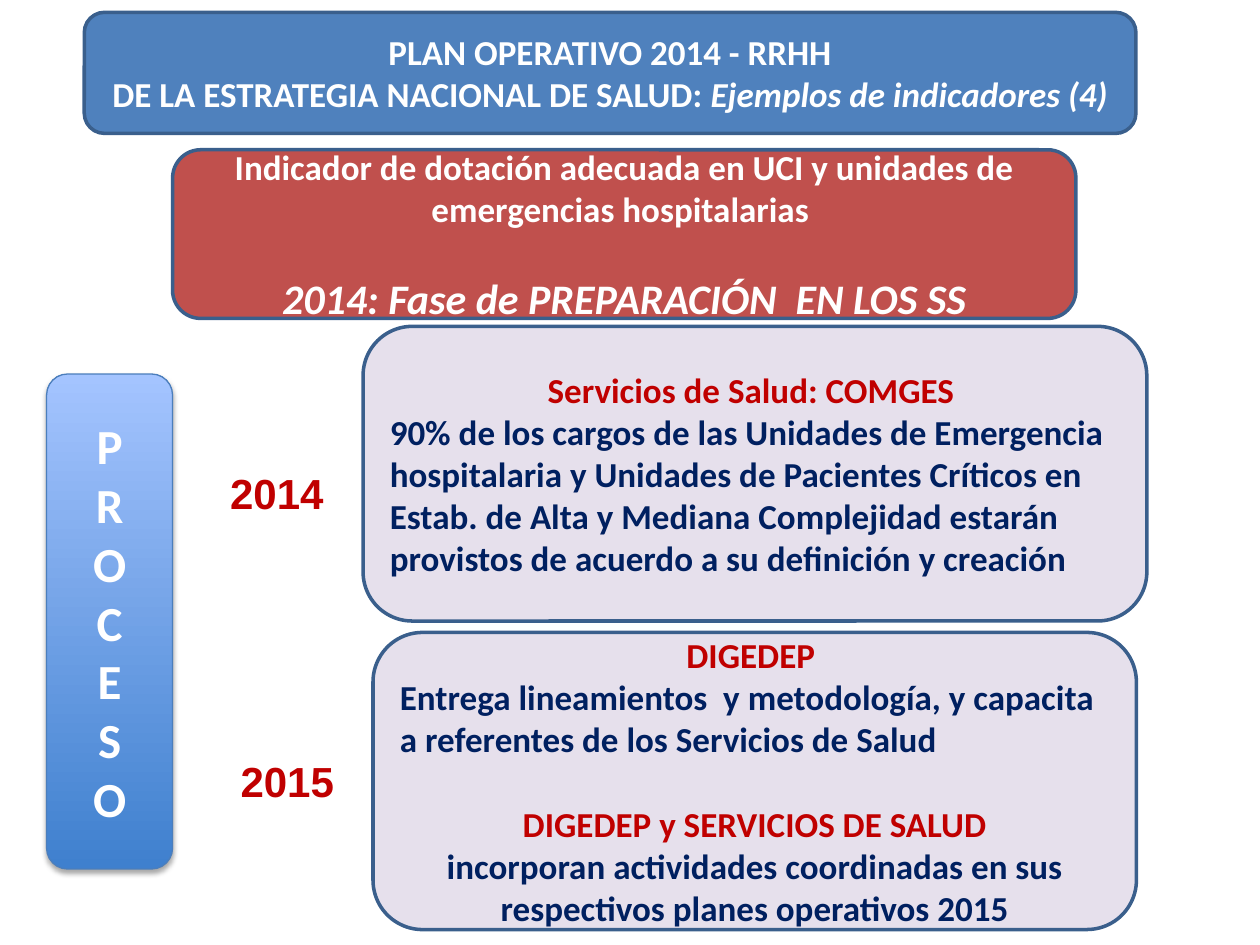
import pptx
import pptx.dml.color
import pptx.enum.shapes
import pptx.enum.text
import pptx.oxml
import pptx.oxml.ns
import pptx.util
from pptx.util import Cm

COLORS = {
    "white": "FFFFFF", "header": "4F81BD", "indicator": "C0504D",
    "panel": "E6E0EC", "outline": "3A5F8C", "red": "C00000", "navy": "002060",
    "process_low": "3F80CE", "process_high": "A4C4FF",
    "process_line": "4B7EBC", "shadow": "000000",
}
RGB = {name: pptx.dml.color.RGBColor.from_string(code) for name, code in COLORS.items()}
ALIGN = pptx.enum.text.PP_ALIGN
ROUNDED = pptx.enum.shapes.MSO_SHAPE.ROUNDED_RECTANGLE
MIDDLE = pptx.enum.text.MSO_ANCHOR.MIDDLE
LINE_GAP = 24.4  # height of one 20 pt line


def write(shape, paragraphs, font="Calibri"):
    """Fill a shape with (alignment, space before, runs); a run is (text, size, color, italic)."""
    frame = shape.text_frame
    for index, (alignment, gap, runs) in enumerate(paragraphs):
        para = frame.paragraphs[0] if index == 0 else frame.add_paragraph()
        para.alignment = alignment
        para.space_before = pptx.util.Pt(gap)
        for text, size, color, italic in runs:
            span = para.add_run()
            span.text = text
            span.font.name = font
            span.font.size = pptx.util.Pt(size)
            span.font.bold = True
            span.font.italic = italic
            span.font.color.rgb = RGB[color]


deck = pptx.Presentation()
deck.slide_width, deck.slide_height = Cm(25.4), Cm(19.05)
page = deck.slides.add_slide(deck.slide_layouts[5])

# Title plate, indicator and the two yearly panels
title_place = (1.7, 0.25, 21.2, 2.44)
panels = [
    (title_place, "header", []),
    ((3.48, 3.02, 18.21, 3.4), "indicator", [
        (ALIGN.CENTER, 0, [("Indicador de dotación adecuada en UCI y unidades de "
                            "emergencias hospitalarias ", 20, "white", False)]),
        (ALIGN.CENTER, LINE_GAP, [("2014: Fase de PREPARACIÓN  EN LOS SS", 24, "white", True)]),
    ]),
    ((7.32, 6.58, 15.8, 5.94), "panel", [
        (ALIGN.CENTER, 0, [("Servicios de Salud: COMGES ", 20, "red", False)]),
        (ALIGN.LEFT, 0, [("90% de los cargos de las Unidades de Emergencia  hospitalaria y "
                          "Unidades de Pacientes Críticos en Estab. de Alta y Mediana "
                          "Complejidad estarán provistos de acuerdo a su definición y "
                          "creación", 20, "navy", False)]),
    ]),
    ((7.52, 12.75, 15.39, 5.99), "panel", [
        (ALIGN.CENTER, 0, [("DIGEDEP ", 20, "red", False)]),
        (ALIGN.LEFT, 0, [("Entrega lineamientos  y metodología, y capacita a referentes "
                          "de los Servicios de Salud", 20, "navy", False)]),
        (ALIGN.CENTER, LINE_GAP, [("DIGEDEP y SERVICIOS DE SALUD", 20, "red", False)]),
        (ALIGN.CENTER, 0, [("incorporan actividades coordinadas en sus respectivos "
                            "planes operativos 2015", 20, "navy", False)]),
    ]),
]
for place, color, paragraphs in panels:
    panel = page.shapes.add_shape(ROUNDED, *map(Cm, place))
    panel.fill.solid()
    panel.fill.fore_color.rgb = RGB[color]
    panel.line.color.rgb = RGB["outline"]
    panel.line.width = pptx.util.Pt(2)
    panel.shadow.inherit = False
    panel.text_frame.vertical_anchor = MIDDLE
    write(panel, paragraphs)

# Title, brought in front of its plate
title = page.shapes.title
title.left, title.top, title.width, title.height = map(Cm, title_place)
title.text_frame.auto_size = pptx.enum.text.MSO_AUTO_SIZE.NONE
title.text_frame.vertical_anchor = MIDDLE
write(title, [
    (ALIGN.CENTER, 0, [("PLAN OPERATIVO 2014 - RRHH", 20, "white", False)]),
    (ALIGN.CENTER, 0, [("DE LA ESTRATEGIA NACIONAL DE SALUD: ", 20, "white", False),
                       ("Ejemplos de indicadores (4)", 20, "white", True)]),
])
page.shapes._spTree.append(title._element)

# Vertical process label
process = page.shapes.add_shape(ROUNDED, Cm(0.94), Cm(7.54), Cm(2.54), Cm(9.98))
process.fill.gradient()
process.fill.gradient_angle = 90
for position, color in enumerate(["process_low", "process_high"]):
    stop = process.fill.gradient_stops[position]
    stop.color.rgb = RGB[color]
    stop.position = position
process.line.color.rgb = RGB["process_line"]
process.line.width = pptx.util.Pt(0.75)
process.shadow.inherit = False
process._element.spPr.find(pptx.oxml.ns.qn("a:effectLst")).append(pptx.oxml.parse_xml(
    '<a:outerShdw xmlns:a="http://schemas.openxmlformats.org/drawingml/2006/main" '
    f'blurRad="{pptx.util.Pt(3.1)}" dist="{pptx.util.Pt(1.8)}" dir="5400000" rotWithShape="0">'
    f'<a:srgbClr val="{COLORS["shadow"]}"><a:alpha val="35000"/></a:srgbClr></a:outerShdw>'))
process.text_frame.vertical_anchor = MIDDLE
write(process, [(ALIGN.CENTER, 0, [(letter, 28, "white", False)]) for letter in "PROCESO"])

# Years
for year, left, top in [("2014", 4.39, 9.3), ("2015", 4.6, 15.11)]:
    box = page.shapes.add_textbox(Cm(left), Cm(top), Cm(2.41), Cm(1.28))
    box.text_frame.word_wrap = False
    box.text_frame.auto_size = pptx.enum.text.MSO_AUTO_SIZE.SHAPE_TO_FIT_TEXT
    write(box, [(ALIGN.LEFT, 0, [(year, 24, "red", False)])], font="Arial")

deck.save("out.pptx")
